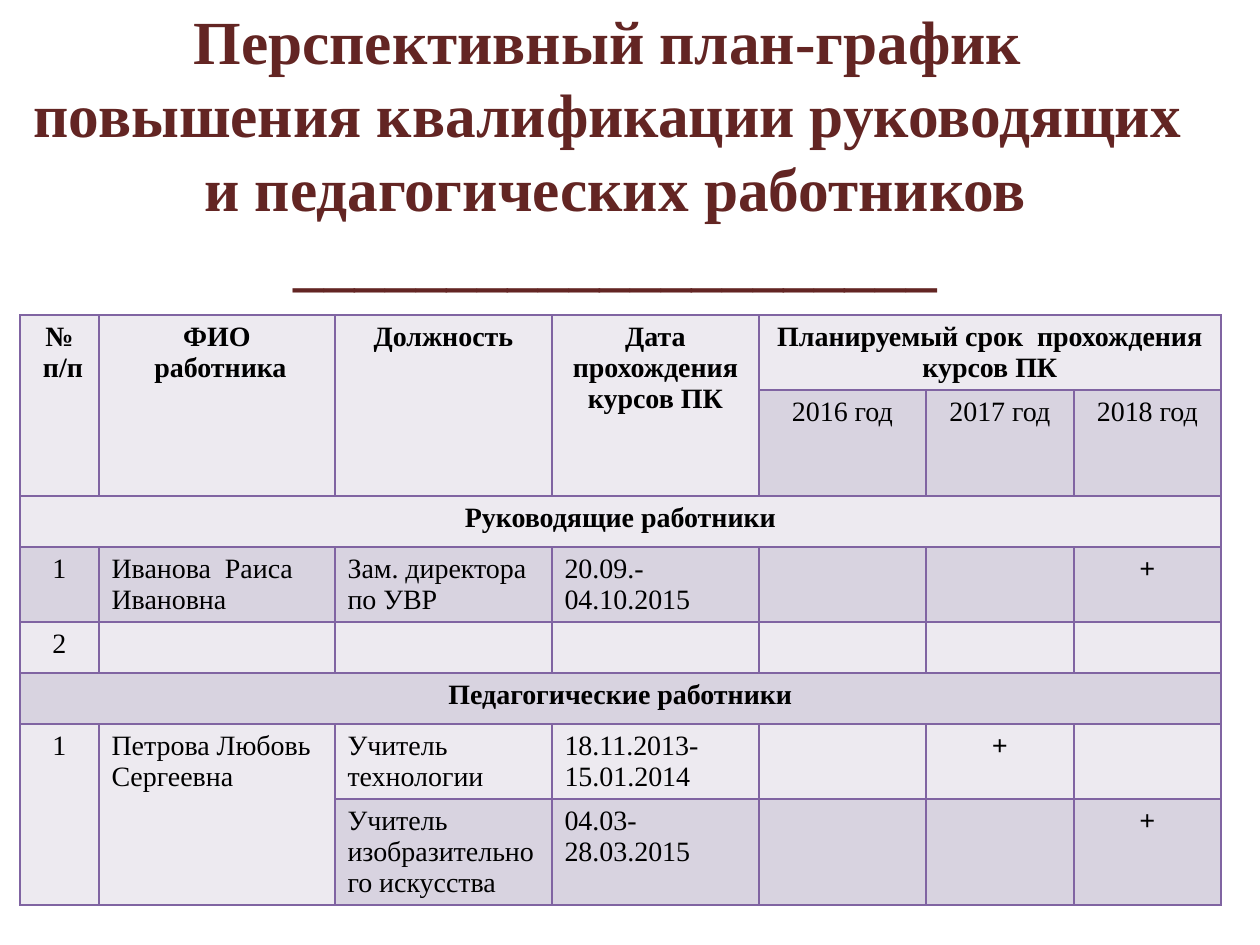
from lxml import etree
from pptx import Presentation
from pptx.dml.color import RGBColor
from pptx.enum.text import MSO_ANCHOR, MSO_AUTO_SIZE, PP_ALIGN
from pptx.oxml.ns import qn
from pptx.util import Pt

PX = 914400 / 126
CENTER, LEFT = PP_ALIGN.CENTER, PP_ALIGN.LEFT
MIDDLE, NO_FIT = MSO_ANCHOR.MIDDLE, MSO_AUTO_SIZE.NONE
FONT = "Times New Roman"
MAROON, BLACK, PURPLE = "632523", "000000", "8064A2"
BANDS = ["EDEAF0", "D8D3E0"]

TITLE_LINES = [
    "Перспективный план-график ",
    "повышения квалификации руководящих ",
    "и педагогических работников",
    "_" * 21,
]
COLUMNS = [79, 236, 217, 207, 167, 148, 147]
ROWS = [75, 106, 51, 75, 51, 51, 75, 106]
CELLS = [
    ["№\n п/п", "ФИО\n работника", "Должность", "Дата\nпрохождения курсов ПК",
     "Планируемый срок  прохождения\nкурсов ПК", "", ""],
    ["", "", "", "", "2016 год", "2017 год", "2018 год"],
    ["Руководящие работники"] + [""] * 6,
    ["1", "Иванова  Раиса Ивановна", "Зам. директора по УВР",
     "20.09.-04.10.2015", "", "", "+"],
    ["2"] + [""] * 6,
    ["Педагогические работники"] + [""] * 6,
    ["1", "Петрова Любовь  Сергеевна", "Учитель технологии",
     "18.11.2013- 15.01.2014", "", "+", ""],
    ["", "", "Учитель изобразительного искусства", "04.03-28.03.2015", "", "", "+"],
]
HEADER_ROWS = (0, 1)
SECTION_ROWS = (2, 5)
# First row, first column, last row, last column
MERGES = [(0, col, 1, col) for col in range(4)] + [(0, 4, 0, 6)]
MERGES += [(row, 0, row, 6) for row in SECTION_ROWS]
MERGES += [(6, col, 7, col) for col in range(2)]


def px(length):
    return round(length * PX)


def color(hex_text):
    return RGBColor.from_string(hex_text)


def add_text(para, text, size=16, bold=False, ink=BLACK, align=LEFT):
    para.alignment = align
    span = para.add_run()
    span.text = text
    span.font.name = FONT
    span.font.size = Pt(size)
    span.font.bold = bold
    span.font.color.rgb = color(ink)


def add_borders(cell, ink, width):
    props = cell._tc.get_or_add_tcPr()
    for side in ("lnL", "lnR", "lnT", "lnB"):
        line = etree.SubElement(props, qn("a:" + side), w=str(Pt(width)))
        fill = etree.SubElement(line, qn("a:solidFill"))
        etree.SubElement(fill, qn("a:srgbClr"), val=ink)


def place_title(page, left, top, width, height):
    title = page.shapes.title
    title.left, title.top = px(left), px(top)
    title.width, title.height = px(width), px(height)
    frame = title.text_frame
    frame.word_wrap = True
    frame.auto_size = NO_FIT
    frame.vertical_anchor = MIDDLE
    # The deep bottom inset lifts the text clear of the table
    frame.margin_top, frame.margin_bottom = px(6), px(80)
    para = frame.paragraphs[0]
    para.line_spacing = Pt(42)
    for index, text in enumerate(TITLE_LINES):
        if index:
            para.add_line_break()
        add_text(para, text, size=35, bold=True, ink=MAROON, align=CENTER)


def fill_cell(cell, row, col, text):
    add_borders(cell, PURPLE, 1)
    cell.fill.solid()
    cell.fill.fore_color.rgb = color(BANDS[row % 2])
    bold = row == 0 or row in SECTION_ROWS or text == "+"
    centered = row in HEADER_ROWS or row in SECTION_ROWS or not 1 <= col <= 3
    if not text:
        return
    frame = cell.text_frame
    for index, line in enumerate(text.split("\n")):
        para = frame.add_paragraph() if index else frame.paragraphs[0]
        add_text(para, line, bold=bold, align=CENTER if centered else LEFT)


def place_schedule(page, left, top):
    table = page.shapes.add_table(
        len(ROWS), len(COLUMNS), px(left), px(top), px(sum(COLUMNS)), px(sum(ROWS))
    ).table
    for column, width in zip(table.columns, COLUMNS):
        column.width = px(width)
    for row, height in zip(table.rows, ROWS):
        row.height = px(height)
    for row, texts in enumerate(CELLS):
        for col, text in enumerate(texts):
            fill_cell(table.cell(row, col), row, col, text)
    for top_row, first_col, last_row, last_col in MERGES:
        table.cell(top_row, first_col).merge(table.cell(last_row, last_col))


def main():
    deck = Presentation()
    deck.slide_width, deck.slide_height = px(1260), px(945)
    page = deck.slides.add_slide(deck.slide_layouts[5])
    place_title(page, 0, 108, 1231, 158)
    place_schedule(page, 20, 315)
    deck.save("out.pptx")


if __name__ == "__main__":
    main()
